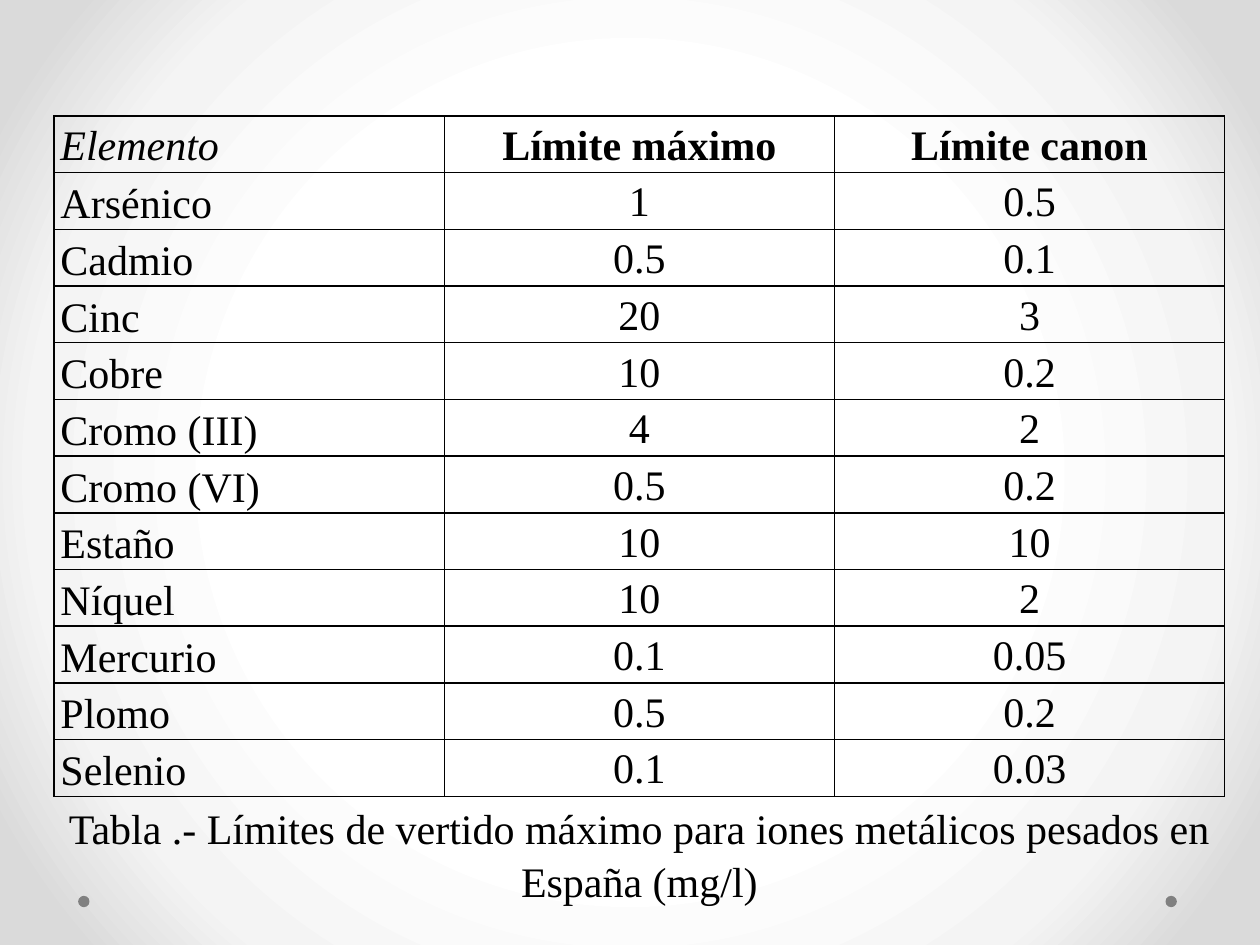
from lxml import etree
from pptx import Presentation
from pptx import util as u
from pptx.dml.color import RGBColor
from pptx.enum import shapes, text
from pptx.oxml import parse_xml
from pptx.oxml.ns import nsdecls, qn

HEAD = ("Elemento", "Límite máximo", "Límite canon")
LIMITS = [
    ("Arsénico", "1", "0.5"),
    ("Cadmio", "0.5", "0.1"),
    ("Cinc", "20", "3"),
    ("Cobre", "10", "0.2"),
    ("Cromo (III)", "4", "2"),
    ("Cromo (VI)", "0.5", "0.2"),
    ("Estaño", "10", "10"),
    ("Níquel", "10", "2"),
    ("Mercurio", "0.1", "0.05"),
    ("Plomo", "0.5", "0.2"),
    ("Selenio", "0.1", "0.03"),
]
NOTE = "Tabla .- Límites de vertido máximo para iones metálicos pesados en España (mg/l)"

BLACK = RGBColor(0, 0, 0)
GRAY = RGBColor(0x80, 0x80, 0x80)
STOPS = [(50, "FFFFFF"), (76, "F4F4F4"), (92, "DADADA")]
FONT, SIZE = "Times New Roman", 24
LEFT, TOP, WIDE, ROW = 0.43, 0.92, 9.29, 0.45
DOT, DOT_TOP, DOT_LEFTS = 0.09, 7.11, (0.62, 9.25)
ALIGN = text.PP_ALIGN


def paint(slide):
    """Give the slide a round gradient that darkens from the centre."""
    stops = "".join(f'<a:gs pos="{pos * 1000}"><a:srgbClr val="{tone}"/></a:gs>'
                    for pos, tone in STOPS)
    back = parse_xml(
        f'<p:bg {nsdecls("p", "a")}><p:bgPr><a:gradFill rotWithShape="1">'
        f'<a:gsLst>{stops}</a:gsLst><a:path path="circle">'
        '<a:fillToRect l="50000" t="50000" r="50000" b="50000"/></a:path>'
        '</a:gradFill><a:effectLst/></p:bgPr></p:bg>')
    slide.element.cSld.insert(0, back)


def edge(cell, sides):
    """Draw the named sides of a cell and clear the others."""
    props = cell._tc.get_or_add_tcPr()
    for side in "LRTB":
        line = etree.SubElement(props, qn("a:ln" + side), w=str(u.Pt(1)))
        if side in sides:
            fill = etree.SubElement(line, qn("a:solidFill"))
            etree.SubElement(fill, qn("a:srgbClr"), val=str(BLACK))
        else:
            etree.SubElement(line, qn("a:noFill"))


def write(cell, words, align, bold=False, italic=False):
    cell.text_frame.text = words
    para = cell.text_frame.paragraphs[0]
    para.alignment, para.line_spacing = align, 1.15
    font = para.runs[0].font
    font.name, font.size = FONT, u.Pt(SIZE)
    font.bold, font.italic = bold, italic
    font.color.rgb = BLACK


def fill_table(slide):
    rows = [HEAD] + LIMITS
    last, cols = len(rows), len(HEAD)
    grid = slide.shapes.add_table(
        last + 1, cols, u.Inches(LEFT), u.Inches(TOP),
        u.Inches(WIDE), u.Inches(ROW * (last + 2))).table
    grid.first_row = grid.horz_banding = False
    for row in grid.rows:
        row.height = u.Inches(ROW)
    grid.rows[last].height = u.Inches(2 * ROW)

    for r in range(last + 1):
        for c in range(cols):
            cell = grid.cell(r, c)
            edge(cell, "T" if r == last else "LRTB")
            cell.fill.background()
            cell.margin_left = cell.margin_right = u.Inches(0.05)
            cell.margin_top = cell.margin_bottom = 0
            if c == 0 and r > 0:
                cell.vertical_anchor = text.MSO_ANCHOR.MIDDLE
            if r < last:
                write(cell, rows[r][c], ALIGN.CENTER if c else ALIGN.JUSTIFY,
                      bold=r == 0 and c > 0, italic=r == c == 0)
    grid.cell(last, 0).merge(grid.cell(last, cols - 1))
    write(grid.cell(last, 0), NOTE, ALIGN.CENTER)


def add_dots(slide):
    for left in DOT_LEFTS:
        dot = slide.shapes.add_shape(
            shapes.MSO_SHAPE.OVAL, u.Inches(left), u.Inches(DOT_TOP),
            u.Inches(DOT), u.Inches(DOT))
        dot.shadow.inherit = False
        dot.fill.solid()
        dot.fill.fore_color.rgb = GRAY
        dot.line.fill.background()


def main():
    deck = Presentation()
    deck.slide_width, deck.slide_height = u.Inches(10), u.Inches(7.5)
    slide = deck.slides.add_slide(deck.slide_layouts[6])
    paint(slide)
    add_dots(slide)
    fill_table(slide)
    deck.save("out.pptx")


if __name__ == "__main__":
    main()
